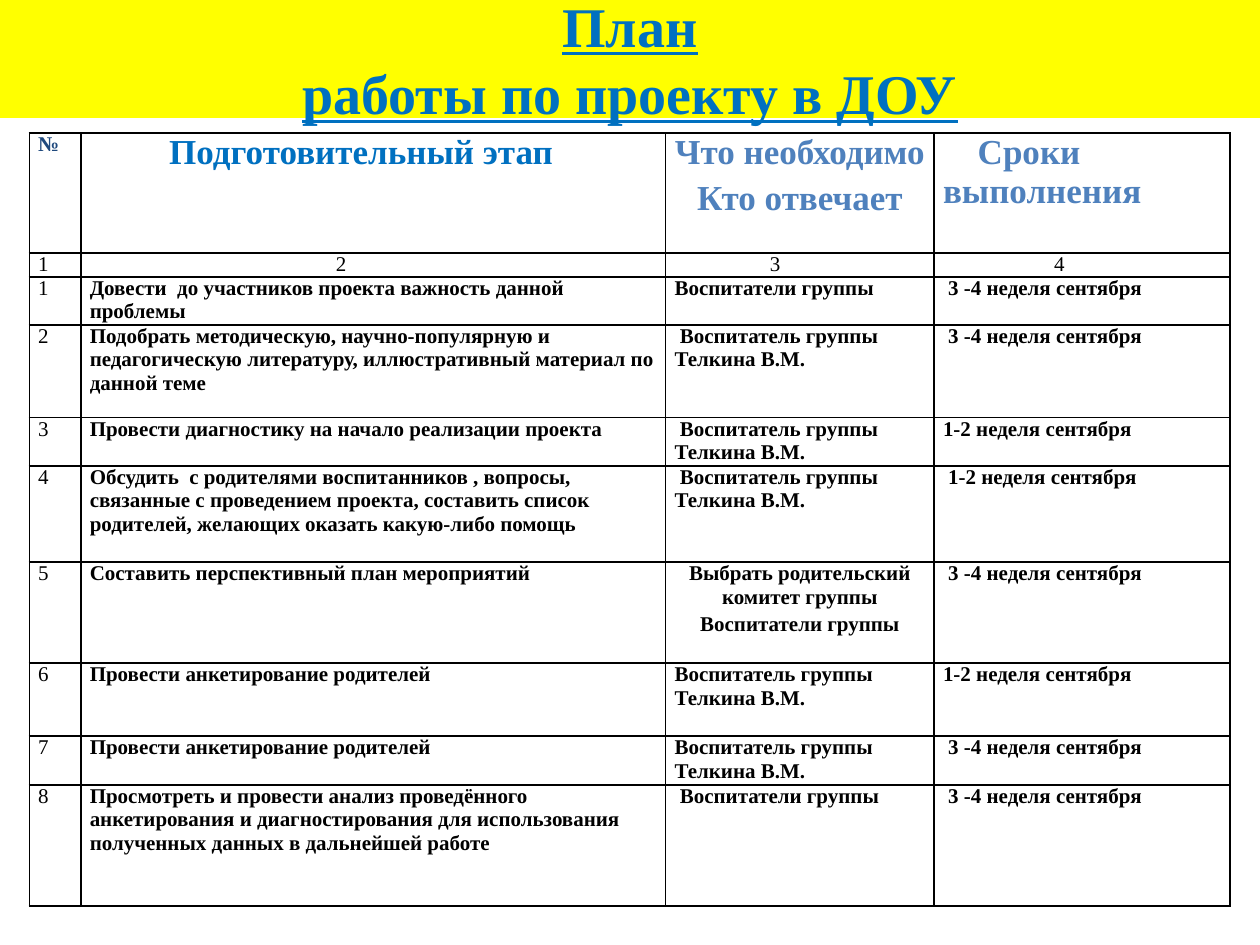
import pptx
import pptx.dml.color
import pptx.enum.shapes
import pptx.enum.text
import pptx.oxml
import pptx.oxml.ns
import pptx.util

Cm = pptx.util.Cm
Pt = pptx.util.Pt
RGBColor = pptx.dml.color.RGBColor
Align = pptx.enum.text.PP_ALIGN
Anchor = pptx.enum.text.MSO_ANCHOR

theme = {
    "font": "Times New Roman",
    "title_size": 32,
    "header_size": 20,
    "body_size": 12,
    "band": "FFFF00",
    "cell": "FFFFFF",
    "border": "000000",
    "text": "000000",
    "accent": "0070C0",
    "header": "4F81BD",
    "number": "1F497D",
}


def write_text(text_frame, text, size=theme["body_size"], color=theme["text"],
               bold=True, underline=False, align=Align.LEFT, indent=0):
    text_frame.word_wrap = True
    text_frame.text = text
    for index, paragraph in enumerate(text_frame.paragraphs):
        paragraph.alignment = align
        if index:
            paragraph.space_before = Pt(size * 0.2)
        if indent:
            properties = paragraph._p.get_or_add_pPr()
            properties.set("marL", "0")
            properties.set("indent", str(Cm(indent)))
        for run in paragraph.runs:
            run.font.name = theme["font"]
            run.font.size = Pt(size)
            run.font.bold = bold
            run.font.underline = underline
            run.font.color.rgb = RGBColor.from_string(color)


presentation = pptx.Presentation()
presentation.slide_width = Cm(25.4)
presentation.slide_height = Cm(19.05)
slide = presentation.slides.add_slide(presentation.slide_layouts[6])

title = slide.shapes.add_shape(
    pptx.enum.shapes.MSO_SHAPE.RECTANGLE, 0, 0, Cm(25.4), Cm(2.38))
title.shadow.inherit = False
title.fill.solid()
title.fill.fore_color.rgb = RGBColor.from_string(theme["band"])
title.line.fill.background()
title.text_frame.vertical_anchor = Anchor.MIDDLE
write_text(title.text_frame, "План\vработы по проекту в ДОУ", size=theme["title_size"],
           color=theme["accent"], underline=True, align=Align.CENTER)

teacher = "Воспитатель группы Телкина В.М."
early = "1-2 неделя сентября"
late = " 3 -4 неделя сентября"
rows = [
    ("№", "Подготовительный этап", "Что необходимо\nКто отвечает", "Сроки выполнения"),
    ("1", "2", "3", "4"),
    ("1", "Довести  до участников проекта важность данной проблемы",
     "Воспитатели группы", late),
    ("2", "Подобрать методическую, научно-популярную и педагогическую литературу, "
     "иллюстративный материал по данной теме", " " + teacher, late),
    ("3", "Провести диагностику на начало реализации проекта", " " + teacher, early),
    ("4", "Обсудить  с родителями воспитанников , вопросы, связанные с проведением "
     "проекта, составить список родителей, желающих оказать какую-либо помощь",
     " " + teacher, " " + early),
    ("5", "Составить перспективный план мероприятий",
     "Выбрать родительский комитет группы\nВоспитатели группы", late),
    ("6", "Провести анкетирование родителей", teacher, early),
    ("7", "Провести анкетирование родителей", teacher, late),
    ("8", "Просмотреть и провести анализ проведённого анкетирования и диагностирования "
     "для использования полученных данных в дальнейшей работе",
     " Воспитатели группы", late),
]
column_widths = [1.04, 11.79, 5.41, 5.97]
row_heights = [2.42, 0.48, 0.97, 1.87, 0.97, 1.94, 2.04, 1.47, 0.98, 2.44]
header_colors = [theme["number"], theme["accent"], theme["header"], theme["header"]]
header_indents = [0, 1.6, 0, 0.7]
numbering_indents = [0, 4.96, 1.92, 2.24]

table = slide.shapes.add_table(
    len(rows), len(column_widths), Cm(0.59), Cm(2.68),
    Cm(sum(column_widths)), Cm(sum(row_heights))).table
for column, width in zip(table.columns, column_widths):
    column.width = Cm(width)
for row, height in zip(table.rows, row_heights):
    row.height = Cm(height)

for row_index, texts in enumerate(rows):
    for column_index, text in enumerate(texts):
        cell = table.cell(row_index, column_index)
        cell.margin_left = cell.margin_right = Cm(0.18)
        cell.margin_top = cell.margin_bottom = 0
        cell.fill.solid()
        cell.fill.fore_color.rgb = RGBColor.from_string(theme["cell"])
        for position, side in enumerate(("lnL", "lnR", "lnT", "lnB")):
            border = pptx.oxml.parse_xml(
                f'<a:{side} {pptx.oxml.ns.nsdecls("a")} w="{Pt(1)}"><a:solidFill>'
                f'<a:srgbClr val="{theme["border"]}"/></a:solidFill></a:{side}>')
            cell._tc.get_or_add_tcPr().insert(position, border)

        style = {"align": Align.CENTER if "\n" in text else Align.LEFT}
        if row_index == 0:
            style["color"] = header_colors[column_index]
            style["indent"] = header_indents[column_index]
            if column_index:
                style["size"] = theme["header_size"]
        elif row_index == 1:
            style["bold"] = False
            style["indent"] = numbering_indents[column_index]
        else:
            style["bold"] = column_index > 0
        write_text(cell.text_frame, text, **style)

presentation.save("out.pptx")
